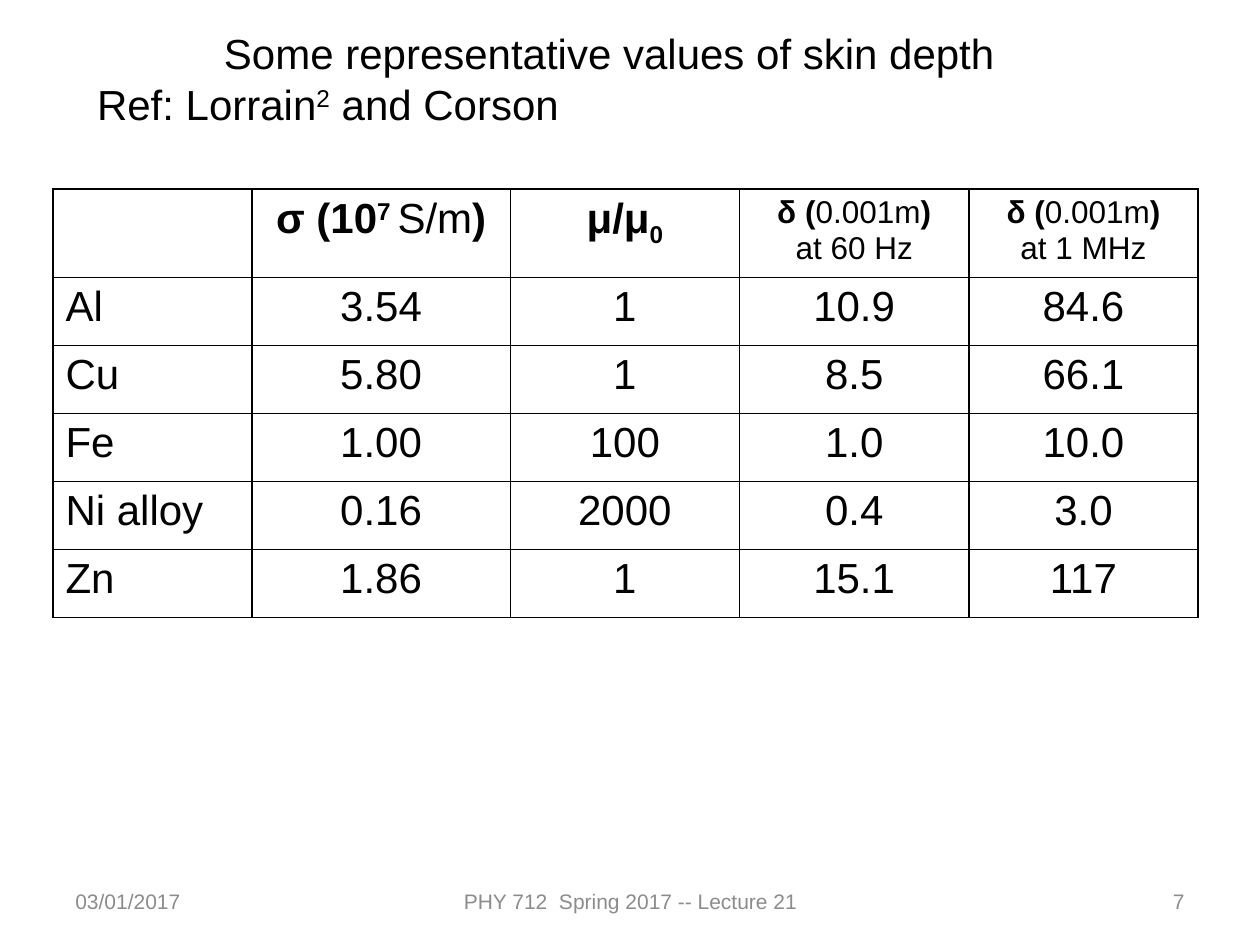
from dataclasses import dataclass

from lxml import etree
from pptx import Presentation
from pptx import util as u
from pptx.dml.color import RGBColor
from pptx.enum import text
from pptx.oxml import ns


@dataclass(frozen=True)
class Theme:
    font: str = "Arial"
    ink: str = "000000"
    muted: str = "8C8C8C"
    body: int = 24
    small: int = 18
    footer: int = 12
    rule: int = 1


theme = Theme()
LEFT, CENTER, RIGHT = text.PP_ALIGN.LEFT, text.PP_ALIGN.CENTER, text.PP_ALIGN.RIGHT
BASELINES = {"^": "30000", "_": "-25000"}


def write(frame, *lines, size=theme.body, color=theme.ink, aligns=(LEFT,), anchor=text.MSO_ANCHOR.TOP):
    """Write lines of (words, marks) runs; marks: b bold, ^ superscript, _ subscript.

    The last of aligns serves all further lines.
    """
    frame.word_wrap = True
    frame.vertical_anchor = anchor
    for i, line in enumerate(lines):
        paragraph = frame.paragraphs[0] if i == 0 else frame.add_paragraph()
        paragraph.alignment = aligns[min(i, len(aligns) - 1)]
        for words, marks in [(line, "")] if isinstance(line, str) else line:
            run = paragraph.add_run()
            run.text = words
            run.font.name, run.font.size = theme.font, u.Pt(size)
            run.font.bold = "b" in marks
            run.font.color.rgb = RGBColor.from_string(color)
            for mark in marks.replace("b", ""):
                run._r.get_or_add_rPr().set("baseline", BASELINES[mark])


def outline(cell):
    properties = cell._tc.get_or_add_tcPr()
    for position, side in enumerate(("lnL", "lnR", "lnT", "lnB")):
        line = etree.Element(ns.qn(f"a:{side}"), w=str(u.Pt(theme.rule)))
        fill = etree.SubElement(line, ns.qn("a:solidFill"))
        etree.SubElement(fill, ns.qn("a:srgbClr"), val=theme.ink)
        properties.insert(position, line)


deck = Presentation()
deck.slide_width, deck.slide_height = u.Inches(10), u.Inches(7.5)
slide = deck.slides.add_slide(deck.slide_layouts[5])

# Title
title = slide.shapes.title
title.left, title.top, title.width, title.height = map(u.Inches, (0.67, 0.17, 8.33, 0.91))
write(title.text_frame, "Some representative values of skin depth",
      [("Ref: Lorrain", ""), ("2", "^"), (" and Corson", "")], aligns=(CENTER, LEFT))
title.text_frame.auto_size = text.MSO_AUTO_SIZE.SHAPE_TO_FIT_TEXT

# Skin depth table
depth = [("δ (", "b"), ("0.001m", ""), (")", "b")]
headings = [
    ([], theme.body),
    ([[("σ (10", "b"), ("7 ", "b^"), ("S/m", ""), (")", "b")]], theme.body),
    ([[("μ/μ", "b"), ("0", "b_")]], theme.body),
    ([depth, "at 60 Hz"], theme.small),
    ([depth, "at 1 MHz"], theme.small),
]
metals = [
    ("Al", "3.54", "1", "10.9", "84.6"),
    ("Cu", "5.80", "1", "8.5", "66.1"),
    ("Fe", "1.00", "100", "1.0", "10.0"),
    ("Ni alloy", "0.16", "2000", "0.4", "3.0"),
    ("Zn", "1.86", "1", "15.1", "117"),
]
column_widths = [1.58, 2.05] + [1.82] * 3
row_heights = [0.7] + [0.54] * len(metals)
table = slide.shapes.add_table(
    len(row_heights), len(column_widths), u.Inches(0.42), u.Inches(1.5),
    u.Inches(sum(column_widths)), u.Inches(sum(row_heights))).table
table.first_row = table.horz_banding = False
for column, width in zip(table.columns, column_widths):
    column.width = u.Inches(width)
for row, height in zip(table.rows, row_heights):
    row.height = u.Inches(height)

rows = [headings] + [[([value], theme.body) for value in metal] for metal in metals]
for r, row in enumerate(rows):
    for c, (lines, size) in enumerate(row):
        cell = table.cell(r, c)
        cell.fill.background()
        outline(cell)
        write(cell.text_frame, *lines, size=size, aligns=(CENTER if c else LEFT,))

# Footer
for words, left, width, align in [
    ("03/01/2017", 0.5, 2.33, LEFT),
    ("PHY 712  Spring 2017 -- Lecture 21", 3.42, 3.17, CENTER),
    ("7", 7.17, 2.33, RIGHT),
]:
    note = slide.shapes.add_textbox(*map(u.Inches, (left, 6.95, width, 0.4)))
    write(note.text_frame, words, size=theme.footer, color=theme.muted,
          aligns=(align,), anchor=text.MSO_ANCHOR.MIDDLE)

deck.save("out.pptx")
